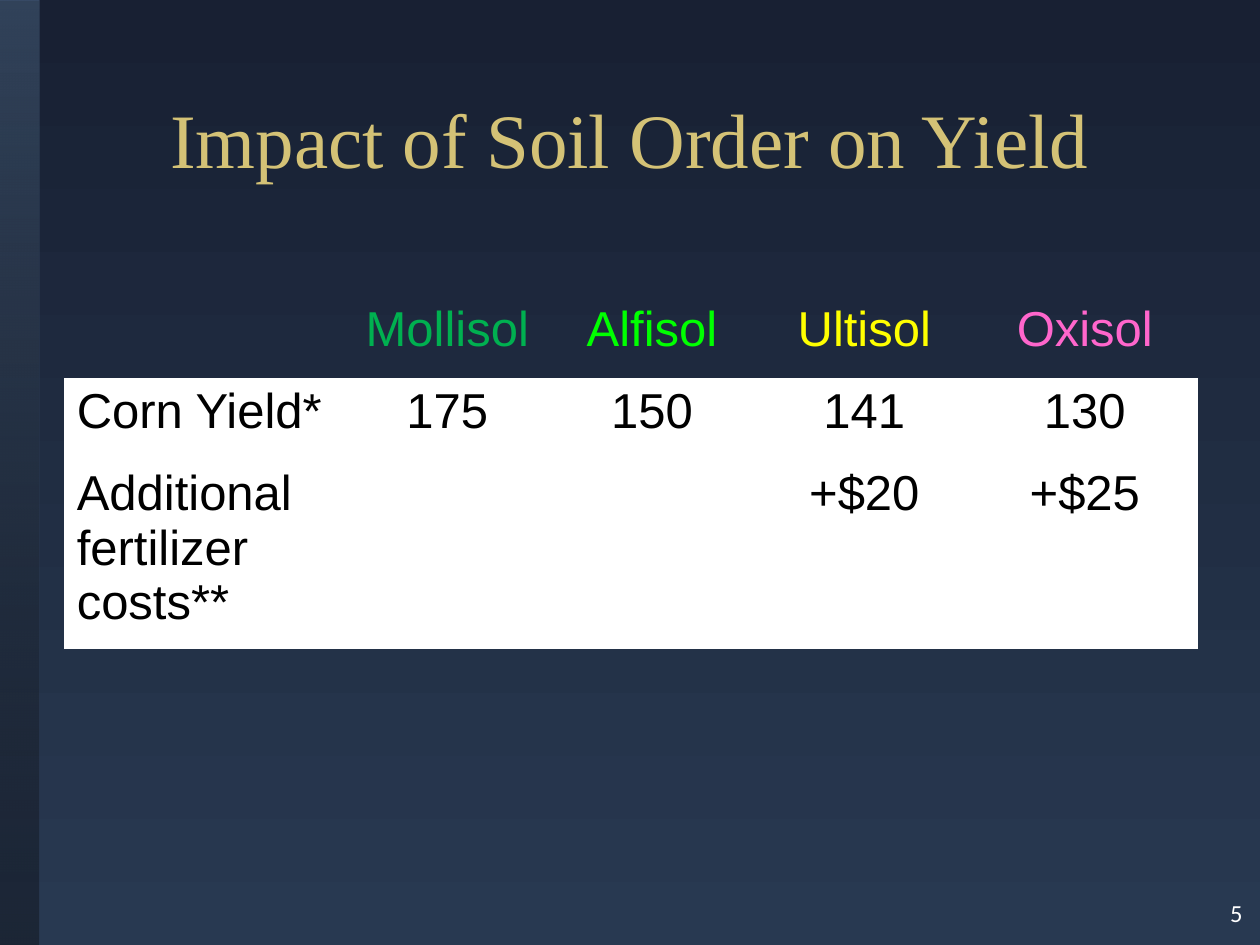
"""Build the slide on how soil order affects corn yield."""
from dataclasses import dataclass
from typing import Optional

from lxml import etree
from pptx import Presentation
from pptx import util as u
from pptx.dml.color import RGBColor
from pptx.enum import shapes, text
from pptx.oxml.ns import qn


@dataclass(frozen=True)
class Theme:
    night: str = "182033"
    dusk: str = "283951"
    strip_top: str = "5E7EA4"
    strip_bottom: str = "343F56"
    gold: str = "D4C276"
    black: str = "000000"
    white: str = "FFFFFF"
    title_font: str = "Times New Roman"
    table_font: str = "Arial"
    number_font: str = "Calibri"
    title_size: int = 44
    table_size: int = 28
    number_size: int = 14
    plain_table: str = "{2D5ABB26-0587-4C30-8999-92F81FD0307C}"


@dataclass(frozen=True)
class Soil:
    name: str
    color: str
    corn_yield: str
    extra_cost: str
    width: float


@dataclass(frozen=True)
class Strip:
    left: float
    top: float
    length: float
    stops: tuple
    alphas: tuple


THEME = Theme()
SOILS = (
    Soil("Mollisol", "00B050", "175", "", 1.58),
    Soil("Alfisol", "00FF00", "150", "", 1.67),
    Soil("Ultisol", "FFFF00", "141", "+$20", 1.7),
    Soil("Oxisol", "FF66CC", "130", "+$25", 1.8),
)
BLUE_STOPS = (THEME.strip_top, THEME.strip_bottom)
STRIPS = (
    Strip(-3.59, 3.6, 7.49, (THEME.black,), (39,)),
    Strip(-3.59, 3.59, 7.49, BLUE_STOPS, (26, 8)),
    Strip(-3.6, 3.6, 7.5, BLUE_STOPS, (26, 8)),
)


def rgb(color: str) -> RGBColor:
    return RGBColor.from_string(color)


def fill_gradient(fill, colors: tuple, angle: int) -> None:
    fill.gradient()
    fill.gradient_angle = angle
    for stop, color in zip(fill.gradient_stops, colors):
        stop.color.rgb = rgb(color)


def write(frame, words: str, font: str, size: int, color: str,
          align: text.PP_ALIGN) -> None:
    frame.text = words
    line = frame.paragraphs[0]
    line.alignment = align
    for run in line.runs:
        run.font.name = font
        run.font.size = u.Pt(size)
        run.font.color.rgb = rgb(color)


def draw_strip(slide, strip: Strip) -> None:
    bar = slide.shapes.add_shape(
        shapes.MSO_SHAPE.RECTANGLE, u.Inches(strip.left), u.Inches(strip.top),
        u.Inches(strip.length), u.Inches(0.31))
    bar.rotation = 90
    bar.shadow.inherit = False
    bar.line.fill.background()
    if len(strip.stops) == 1:
        bar.fill.solid()
        bar.fill.fore_color.rgb = rgb(strip.stops[0])
    else:
        fill_gradient(bar.fill, strip.stops, 0)
    tints = bar._element.spPr.iter(qn("a:srgbClr"))
    for tint, alpha in zip(tints, strip.alphas):
        etree.SubElement(tint, qn("a:alpha"), val=str(alpha * 1000))


def draw_yields(slide) -> None:
    rows = (
        ("", *(soil.name for soil in SOILS)),
        ("Corn Yield*", *(soil.corn_yield for soil in SOILS)),
        ("Additional fertilizer costs**", *(soil.extra_cost for soil in SOILS)),
    )
    widths = (2.25, *(soil.width for soil in SOILS))
    heights = (0.65, 0.65, 1.5)
    yields = slide.shapes.add_table(
        len(rows), len(widths), u.Inches(0.51), u.Inches(2.35),
        u.Inches(sum(widths)), u.Inches(sum(heights))).table
    yields.first_row = yields.horz_banding = False
    yields._tbl.tblPr.find(qn("a:tableStyleId")).text = THEME.plain_table
    for column, width in zip(yields.columns, widths):
        column.width = u.Inches(width)
    for r, (entries, height) in enumerate(zip(rows, heights)):
        yields.rows[r].height = u.Inches(height)
        for c, entry in enumerate(entries):
            cell = yields.cell(r, c)
            if r:
                cell.fill.solid()
                cell.fill.fore_color.rgb = rgb(THEME.white)
            else:
                cell.fill.background()
            soil: Optional[Soil] = SOILS[c - 1] if c else None
            color = soil.color if soil and r == 0 else THEME.black
            align = text.PP_ALIGN.CENTER if soil else text.PP_ALIGN.LEFT
            write(cell.text_frame, entry, THEME.table_font, THEME.table_size,
                  color, align)


def main() -> None:
    deck = Presentation()
    deck.slide_width, deck.slide_height = u.Inches(10), u.Inches(7.5)
    slide = deck.slides.add_slide(deck.slide_layouts[5])
    fill_gradient(slide.background.fill, (THEME.night, THEME.dusk), 270)

    for strip in STRIPS[:2]:
        draw_strip(slide, strip)

    number = slide.shapes.add_textbox(
        u.Inches(9.28), u.Inches(7.08), u.Inches(0.68), u.Inches(0.42))
    number.text_frame.word_wrap = True
    write(number.text_frame, "5", THEME.number_font, THEME.number_size,
          THEME.white, text.PP_ALIGN.RIGHT)

    title = slide.shapes.title
    title.left, title.top = u.Inches(0.5), u.Inches(0.36)
    title.width, title.height = u.Inches(9), u.Inches(1.47)
    title.text_frame.vertical_anchor = text.MSO_ANCHOR.MIDDLE
    write(title.text_frame, "Impact of Soil Order on Yield", THEME.title_font,
          THEME.title_size, THEME.gold, text.PP_ALIGN.CENTER)

    draw_yields(slide)
    draw_strip(slide, STRIPS[2])
    deck.save("out.pptx")


if __name__ == "__main__":
    main()
